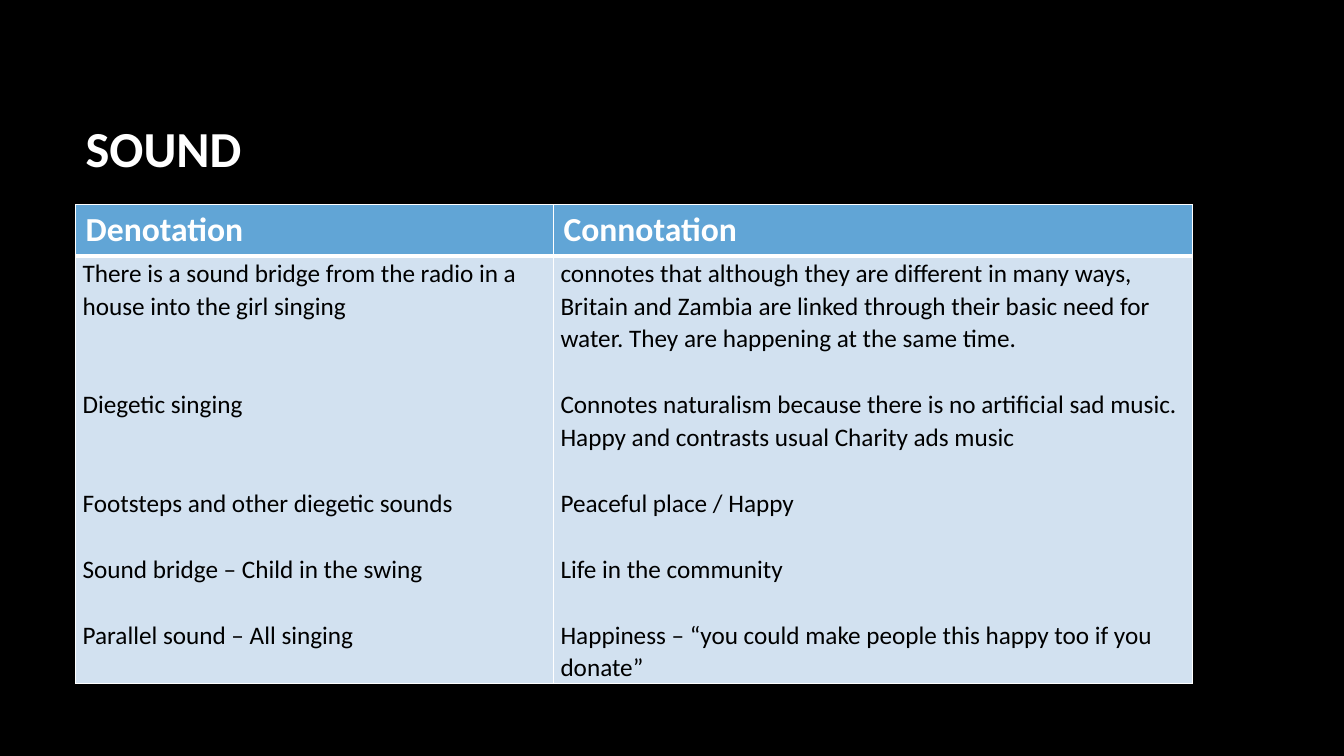
from lxml import etree
from pptx import Presentation
from pptx.dml.color import RGBColor
from pptx.enum.text import MSO_ANCHOR, PP_ALIGN
from pptx.oxml.ns import qn
from pptx.util import Inches, Pt

BLACK = RGBColor(0x00, 0x00, 0x00)
WHITE = RGBColor(0xFF, 0xFF, 0xFF)
HEADER_BLUE = RGBColor(0x61, 0xA5, 0xD6)
BODY_BLUE = RGBColor(0xD2, 0xE1, 0xF0)
MIDDLE = MSO_ANCHOR.MIDDLE
TOP = MSO_ANCHOR.TOP
LEFT = PP_ALIGN.LEFT

FONT = "Calibri"
BODY_LINE = 23.5  # height of one body line in points

# Each entry: text and the number of empty lines above it
DENOTATION = [
    ("There is a sound bridge from the radio in a house into the girl singing", 0),
    ("Diegetic singing", 2),
    ("Footsteps and other diegetic sounds", 2),
    ("Sound bridge – Child in the swing", 1),
    ("Parallel sound – All singing", 1),
]
CONNOTATION = [
    ("connotes that although they are different in many ways, Britain and Zambia "
     "are linked through their basic need for water. They are happening at the same time.", 0),
    ("Connotes naturalism because there is no artificial sad music. "
     "Happy and contrasts usual Charity ads music", 1),
    ("Peaceful place / Happy", 1),
    ("Life in the community", 1),
    ("Happiness – “you could make people this happy too if you donate”", 1),
]


class SlideBuilder:
    def __init__(self, deck):
        self.page = deck.slides.add_slide(deck.slide_layouts[5])
        self.page.background.fill.solid()
        self.page.background.fill.fore_color.rgb = BLACK

    def style(self, para, size, color, bold):
        para.alignment = LEFT
        for span in para.runs:
            span.font.name = FONT
            span.font.size = Pt(size)
            span.font.bold = bold
            span.font.color.rgb = color

    def title(self, text, left, top, width, height):
        box = self.page.shapes.title
        box.left, box.top = Inches(left), Inches(top)
        box.width, box.height = Inches(width), Inches(height)
        box.text_frame.text = text
        box.text_frame.vertical_anchor = MIDDLE
        self.style(box.text_frame.paragraphs[0], 36, WHITE, True)

    def table(self, left, top, widths, heights):
        frame = self.page.shapes.add_table(
            len(heights), len(widths), Inches(left), Inches(top),
            Inches(sum(widths)), Inches(sum(heights)))
        for column, width in zip(frame.table.columns, widths):
            column.width = Inches(width)
        for row, height in zip(frame.table.rows, heights):
            row.height = Inches(height)
        return frame.table

    def cell(self, cell, fill, margins, borders):
        cell.margin_left = cell.margin_right = Inches(margins[0])
        cell.margin_top = cell.margin_bottom = Inches(margins[1])
        cell.vertical_anchor = TOP
        properties = cell._tc.get_or_add_tcPr()
        for side, width in borders.items():
            line = etree.SubElement(properties, qn("a:ln" + side), w=str(Pt(width)))
            solid = etree.SubElement(line, qn("a:solidFill"))
            etree.SubElement(solid, qn("a:srgbClr"), val=str(WHITE))
        cell.fill.solid()
        cell.fill.fore_color.rgb = fill

    def header_cell(self, cell, text):
        self.cell(cell, HEADER_BLUE, (0.1, 0.05), {"L": 1, "R": 1, "T": 1, "B": 3})
        cell.text_frame.text = text
        self.style(cell.text_frame.paragraphs[0], 24, WHITE, True)

    def body_cell(self, cell, entries):
        self.cell(cell, BODY_BLUE, (0.07, 0), {"L": 1, "R": 1, "T": 3, "B": 1})
        cell.text_frame.text = "\n".join(text for text, gap in entries)
        for para, (text, gap) in zip(cell.text_frame.paragraphs, entries):
            para.line_spacing = 1.07
            para.space_before = Pt(gap * BODY_LINE)
            self.style(para, 18, BLACK, False)


def main():
    deck = Presentation()
    deck.slide_width, deck.slide_height = Inches(13.33), Inches(7.5)
    builder = SlideBuilder(deck)

    # Title
    builder.title("SOUND", 0.75, 0.67, 11.08, 1.59)

    # Table of sounds and their meanings
    table = builder.table(0.75, 2.03, [4.74, 6.34], [0.51, 4.24])
    columns = [("Denotation", DENOTATION), ("Connotation", CONNOTATION)]
    for index, (heading, entries) in enumerate(columns):
        builder.header_cell(table.cell(0, index), heading)
        builder.body_cell(table.cell(1, index), entries)

    deck.save("out.pptx")


if __name__ == "__main__":
    main()
